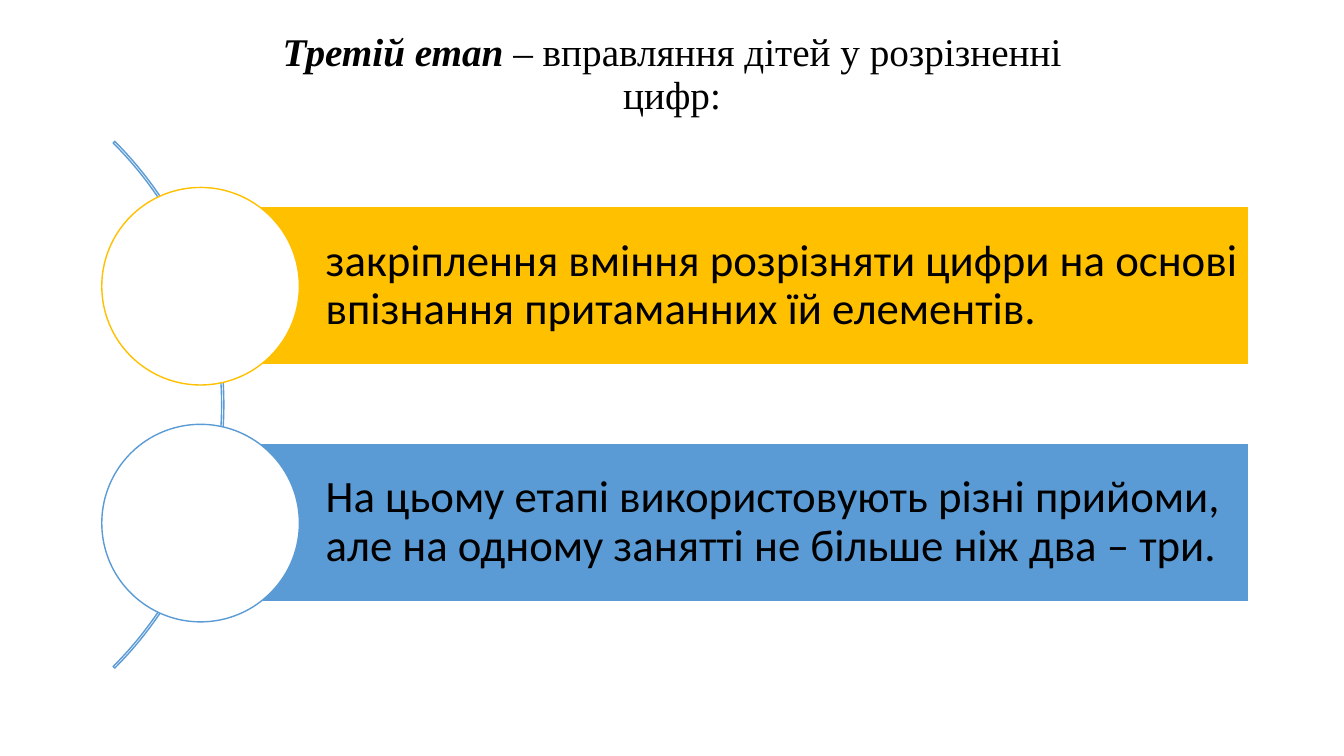
import pptx
import pptx.dml.color
import pptx.enum.shapes
import pptx.enum.text
import pptx.util

PX = 9144
BLUE, GOLD, WHITE, BLACK = "5B9BD5", "FFC000", "FFFFFF", "000000"
SHAPE = pptx.enum.shapes.MSO_SHAPE
ALIGN = pptx.enum.text.PP_ALIGN
STAGES = [
    (GOLD, "закріплення вміння розрізняти цифри на основі впізнання притаманних їй елементів."),
    (BLUE, "На цьому етапі використовують різні прийоми, але на одному занятті не більше ніж два – три."),
]


def px(*values):
    """Turn px lengths into EMU."""
    return [pptx.util.Emu(v * PX) for v in values]


def rgb(color):
    """Turn a hex string into a colour."""
    return pptx.dml.color.RGBColor.from_string(color)


def add_shape(s, kind, box, line, fill=None):
    """Add an outlined preset shape, filled or hollow."""
    sp = s.shapes.add_shape(kind, *px(*box))
    sp.shadow.inherit = False
    sp.line.color.rgb = rgb(line)
    sp.line.width = pptx.util.Pt(1)
    if fill:
        sp.fill.solid()
        sp.fill.fore_color.rgb = rgb(fill)
    else:
        sp.fill.background()
    return sp


def set_text(sp, runs, font, size, align, insets):
    """Fill a shape with one paragraph of (text, emphasis) runs."""
    tf = sp.text_frame
    tf.word_wrap = True
    tf.vertical_anchor = pptx.enum.text.MSO_ANCHOR.MIDDLE
    tf.margin_left, tf.margin_top, tf.margin_right, tf.margin_bottom = px(*insets)
    p = tf.paragraphs[0]
    p.alignment = align
    p.line_spacing = 0.9
    p.font.name = font
    p.font.size = pptx.util.Pt(size)
    p.font.color.rgb = rgb(BLACK)
    for text, emphasis in runs:
        r = p.add_run()
        r.text = text
        if emphasis:
            r.font.bold = r.font.italic = True


def add_title(s):
    """Add the centred heading."""
    sp = s.shapes.add_textbox(*px(247, 22, 839, 105))
    runs = [("Третій етап ", True), ("– вправляння дітей у розрізненні цифр:", False)]
    set_text(sp, runs, "Times New Roman", 28, ALIGN.CENTER, (10, 5, 10, 5))


def add_arc(s):
    """Add the thin arc that links the circles."""
    sp = add_shape(s, SHAPE.BLOCK_ARC, (-517, 32, 739, 739), BLUE)
    for i, value in enumerate((189, 27, 0.003)):
        sp.adjustments[i] = value


def add_stage(s, top, color, text):
    """Add a text bar with a circle over its left end."""
    sp = add_shape(s, SHAPE.RECTANGLE, (199, top, 1039, 157), WHITE, color)
    set_text(sp, [(text, False)], "Calibri", 32, ALIGN.LEFT, (124, 9, 9, 9))
    add_shape(s, SHAPE.OVAL, (101, top - 19, 196, 196), color, WHITE)


def main():
    """Build and save the slide."""
    prs = pptx.Presentation()
    prs.slide_width, prs.slide_height = px(1333, 750)
    s = prs.slides.add_slide(prs.slide_layouts[6])
    add_title(s)
    add_arc(s)
    for i, (color, text) in enumerate(STAGES):
        add_stage(s, 205 + 235 * i, color, text)
    prs.save("out.pptx")


if __name__ == "__main__":
    main()
